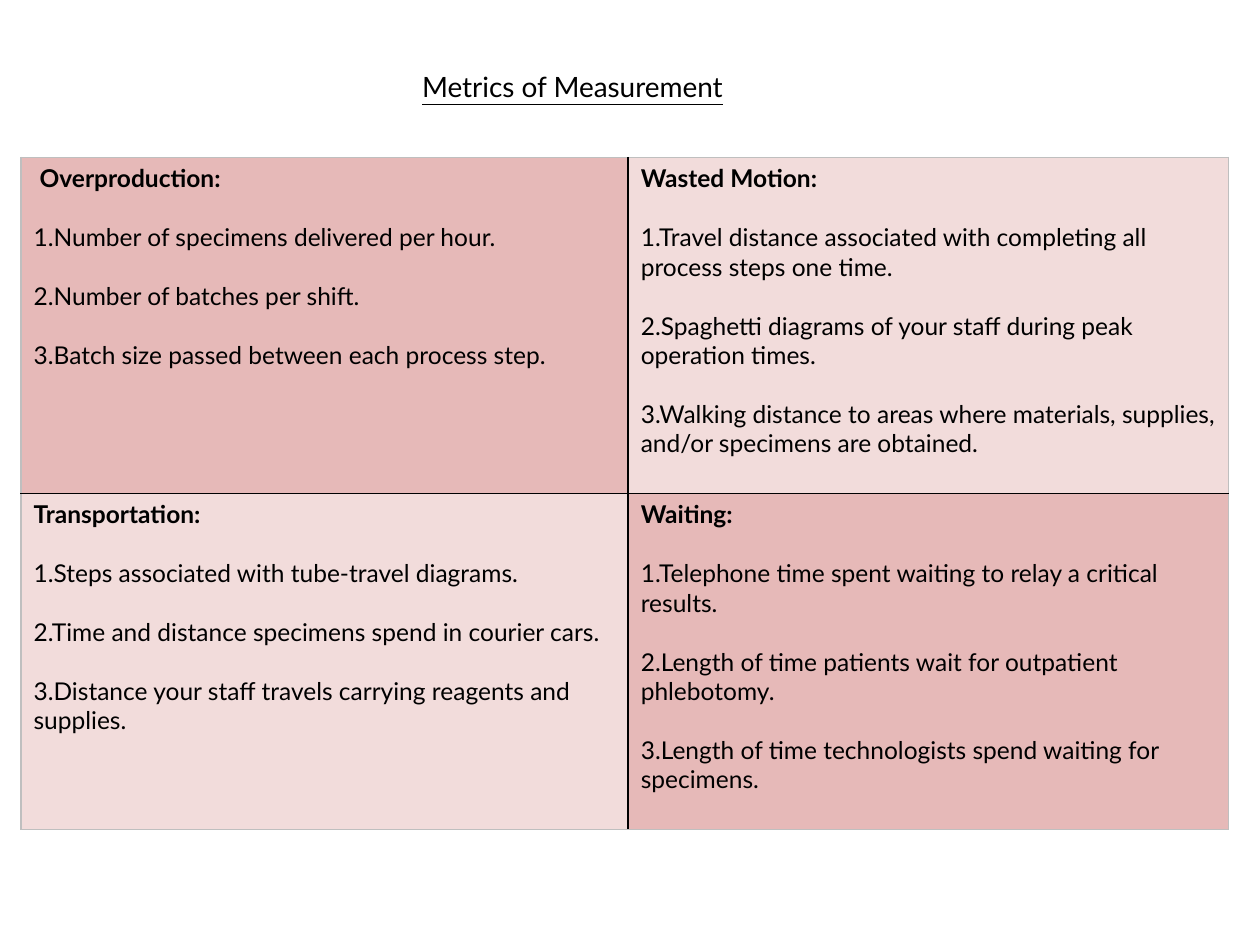
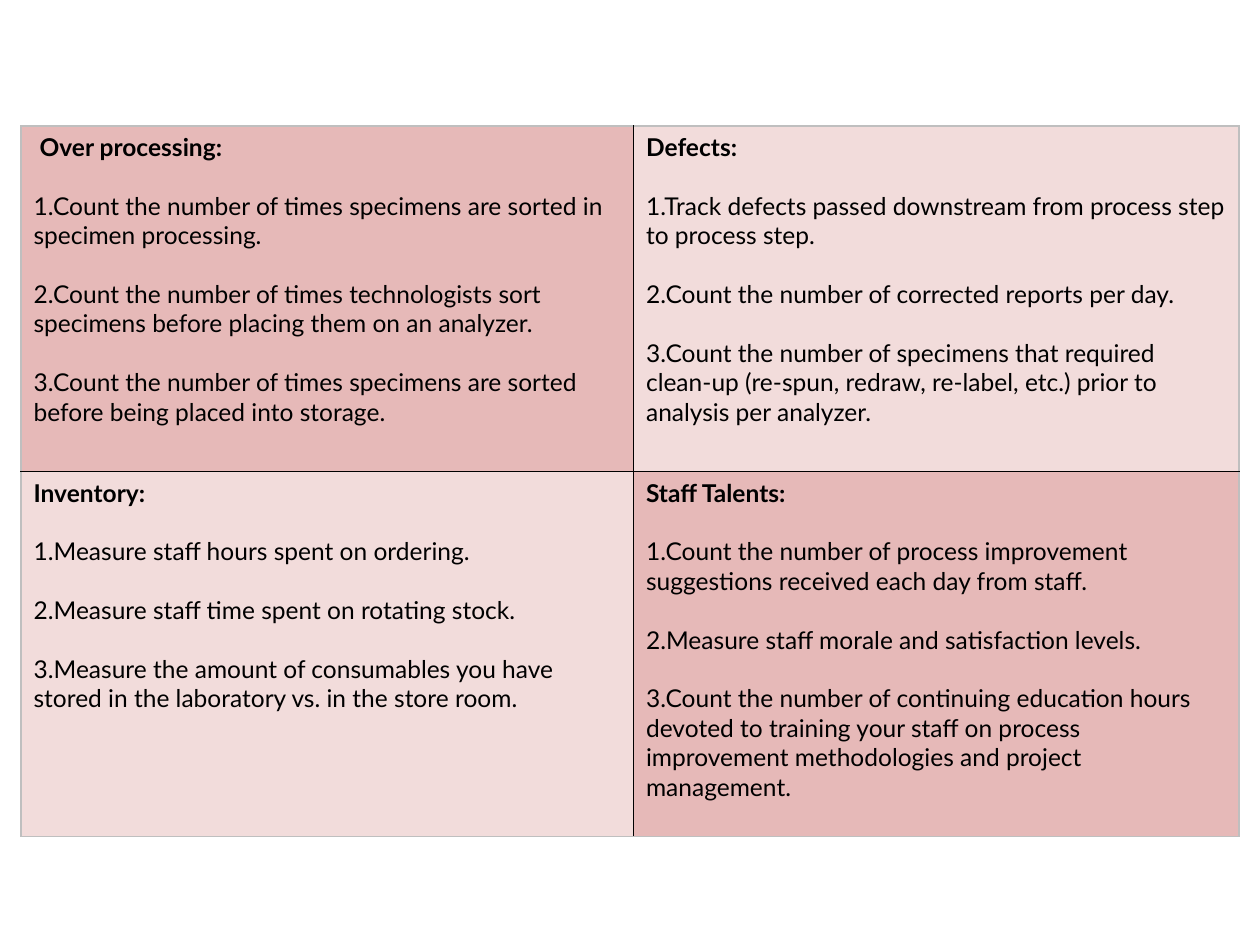
from lxml.etree import SubElement
from pptx import Presentation
from pptx.dml.color import RGBColor
from pptx.enum.text import MSO_ANCHOR, MSO_AUTO_SIZE, PP_ALIGN
from pptx.oxml.ns import qn
from pptx.util import Pt

FONT = "Lato"
BLACK = RGBColor(0x00, 0x00, 0x00)
BORDER_GREY = RGBColor(0xBF, 0xBF, 0xBF)
ROSE = RGBColor(0xE6, 0xB9, 0xB8)
PALE_ROSE = RGBColor(0xF2, 0xDC, 0xDB)
TITLE_ONLY, BLANK = 5, 6
TABLE_LEFT = Pt(12)
ITEM_GAP = Pt(16.8)

# Each quadrant is a heading and its metrics, in reading order.
FIRST_WASTES = [
    (" Overproduction:", [
        "Number of specimens delivered per hour.",
        "Number of batches per shift.",
        "Batch size passed between each process step."]),
    ("Wasted Motion:", [
        "Travel distance associated with completing all process steps one time.",
        "Spaghetti diagrams of your staff during peak operation times.",
        "Walking distance to areas where materials, supplies, and/or specimens "
        "are obtained."]),
    ("Transportation:", [
        "Steps associated with tube-travel diagrams.",
        "Time and distance specimens spend in courier cars.",
        "Distance your staff travels carrying reagents and supplies."]),
    ("Waiting:", [
        "Telephone time spent waiting to relay a critical results.",
        "Length of time patients wait for outpatient phlebotomy.",
        "Length of time technologists spend waiting for specimens."]),
]
SECOND_WASTES = [
    (" Over processing:", [
        "Count the number of times specimens are sorted in specimen processing.",
        "Count the number of times technologists sort specimens before placing "
        "them on an analyzer.",
        "Count the number of times specimens are sorted before being placed "
        "into storage."]),
    ("Defects:", [
        "Track defects passed downstream from process step to process step.",
        "Count the number of corrected reports per day.",
        "Count the number of specimens that required clean-up (re-spun, redraw, "
        "re-label, etc.) prior to analysis per analyzer."]),
    ("Inventory:", [
        "Measure staff hours spent on ordering.",
        "Measure staff time spent on rotating stock.",
        "Measure the amount of consumables you have stored in the laboratory "
        "vs. in the store room."]),
    ("Staff Talents:", [
        "Count the number of process improvement suggestions received each day "
        "from staff.",
        "Measure staff morale and satisfaction levels.",
        "Count the number of continuing education hours devoted to training "
        "your staff on process improvement methodologies and project "
        "management."]),
]


def add_run(paragraph, text, size, bold=False, underline=False):
    run = paragraph.add_run()
    run.text = text
    run.font.name = FONT
    run.font.size = size
    run.font.bold = bold
    run.font.underline = underline
    run.font.color.rgb = BLACK


def add_title(slide, text):
    title = slide.shapes.title
    title.left, title.top = Pt(234), Pt(36)
    title.width, title.height = Pt(193), Pt(26.6)
    frame = title.text_frame
    frame.auto_size = MSO_AUTO_SIZE.NONE
    frame.word_wrap = True
    frame.vertical_anchor = MSO_ANCHOR.MIDDLE
    paragraph = frame.paragraphs[0]
    paragraph.alignment = PP_ALIGN.LEFT
    add_run(paragraph, text, Pt(16), underline=True)


def set_borders(cell, row, column):
    """Draw black lines between quadrants and grey ones around the table."""
    inner_sides = {"lnR" if column == 0 else "lnL", "lnB" if row == 0 else "lnT"}
    properties = cell._tc.get_or_add_tcPr()
    for side in ("lnL", "lnR", "lnT", "lnB"):
        line = SubElement(properties, qn(f"a:{side}"), w=str(Pt(1)))
        fill = SubElement(line, qn("a:solidFill"))
        color = BLACK if side in inner_sides else BORDER_GREY
        SubElement(fill, qn("a:srgbClr"), val=str(color))


def fill_quadrant(cell, heading, metrics):
    frame = cell.text_frame
    add_run(frame.paragraphs[0], heading, Pt(14), bold=True)
    for number, metric in enumerate(metrics, start=1):
        paragraph = frame.add_paragraph()
        paragraph.space_before = ITEM_GAP
        add_run(paragraph, f"{number}.{metric}", Pt(14))


def add_quadrant_table(slide, top, column_widths, row_heights, quadrants):
    frame = slide.shapes.add_table(
        2, 2, TABLE_LEFT, top, sum(column_widths), sum(row_heights))
    table = frame.table
    table.first_row = table.horz_banding = False
    for column, width in zip(table.columns, column_widths):
        column.width = width
    for row, height in zip(table.rows, row_heights):
        row.height = height
    for index, (heading, metrics) in enumerate(quadrants):
        row, column = divmod(index, 2)
        cell = table.cell(row, column)
        set_borders(cell, row, column)
        cell.fill.solid()
        cell.fill.fore_color.rgb = ROSE if row == column else PALE_ROSE
        fill_quadrant(cell, heading, metrics)


def main():
    presentation = Presentation()
    presentation.slide_width, presentation.slide_height = Pt(720), Pt(540)
    layouts = presentation.slide_layouts

    slide = presentation.slides.add_slide(layouts[TITLE_ONLY])
    add_title(slide, "Metrics of Measurement")
    add_quadrant_table(slide, Pt(90), (Pt(347), Pt(343)), (Pt(192), Pt(192)),
                       FIRST_WASTES)

    slide = presentation.slides.add_slide(layouts[BLANK])
    add_quadrant_table(slide, Pt(72), (Pt(350), Pt(346)), (Pt(197.5), Pt(208.5)),
                       SECOND_WASTES)

    presentation.save("out.pptx")


if __name__ == "__main__":
    main()
